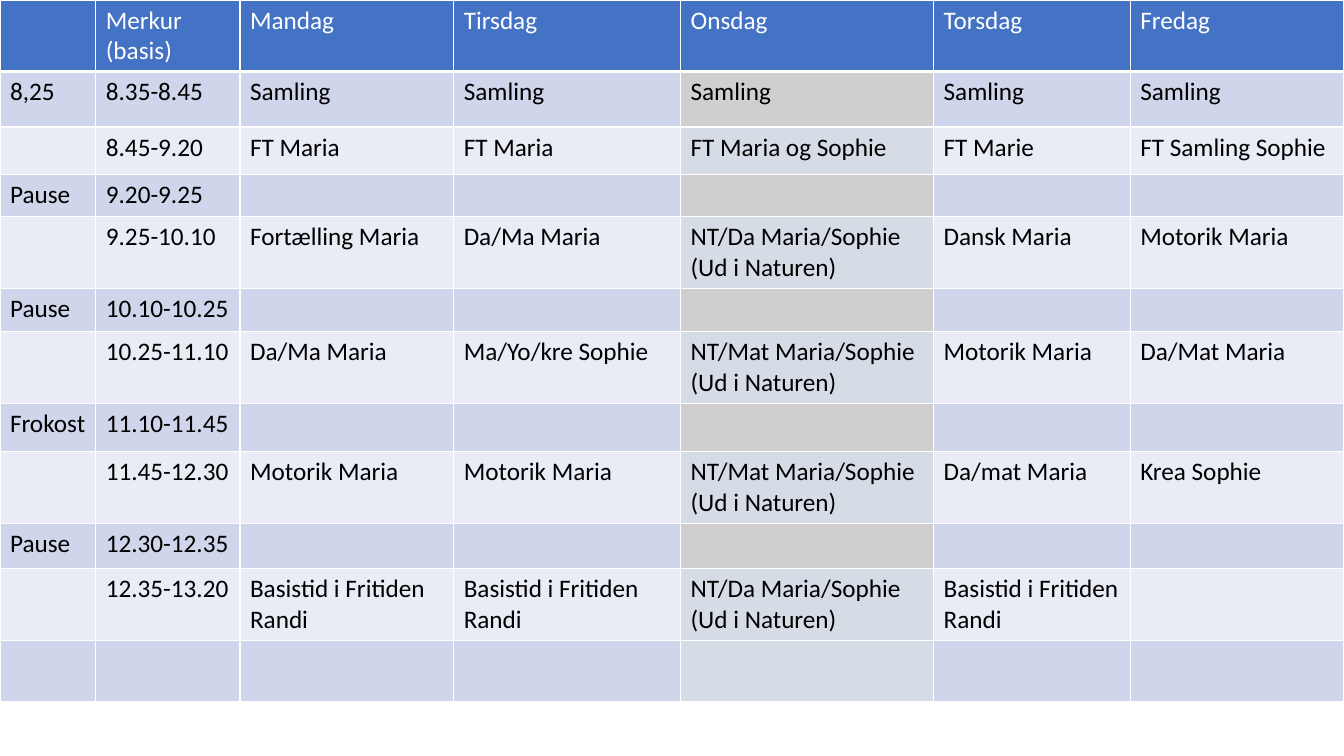
from pptx import Presentation
from pptx.dml.color import RGBColor as RGB
from pptx.oxml.ns import qn
from pptx.util import Inches, Pt
from lxml.etree import SubElement

COLORS = {
    "header": "4472C4", "odd": "CFD5EA", "even": "E9EBF5",
    "wed_odd": "D0CECE", "wed_even": "D6DCE5",
    "white": "FFFFFF", "black": "000000",
}
FONT = {"name": "Calibri", "size": Pt(18), "bold": False}
WEDNESDAY = 4
COL_WIDTHS = [0.95, 1.43, 2.12, 2.25, 2.51, 1.95, 2.12]
ROW_HEIGHTS = [0.48, 0.55, 0.47, 0.42, 0.53, 0.43,
               0.53, 0.48, 0.71, 0.45, 0.4, 0.61]
HEADER_BORDERS = {"a:lnL": 1, "a:lnR": 1, "a:lnT": 1, "a:lnB": 3}

OUTDOORS = "\n(Ud i Naturen)"
AFTERNOON = "Basistid i Fritiden Randi"
# Rows may be shorter than the table; the remaining cells stay empty
TIMETABLE = [
    ["", "Merkur (basis)", "Mandag", "Tirsdag", "Onsdag", "Torsdag", "Fredag"],
    ["8,25", "8.35-8.45"] + ["Samling"] * 5,
    ["", "8.45-9.20", "FT Maria", "FT Maria", "FT Maria og Sophie",
     "FT Marie", "FT Samling Sophie"],
    ["Pause", "9.20-9.25"],
    ["", "9.25-10.10", "Fortælling Maria", "Da/Ma Maria",
     "NT/Da Maria/Sophie" + OUTDOORS, "Dansk Maria", "Motorik Maria"],
    ["Pause", "10.10-10.25"],
    ["", "10.25-11.10", "Da/Ma Maria", "Ma/Yo/kre Sophie",
     "NT/Mat Maria/Sophie" + OUTDOORS, "Motorik Maria", "Da/Mat Maria"],
    ["Frokost", "11.10-11.45"],
    ["", "11.45-12.30", "Motorik Maria", "Motorik Maria",
     "NT/Mat Maria/Sophie" + OUTDOORS, "Da/mat Maria", "Krea Sophie"],
    ["Pause", "12.30-12.35"],
    ["", "12.35-13.20", AFTERNOON, AFTERNOON,
     "NT/Da Maria/Sophie" + OUTDOORS, AFTERNOON],
    [],
]


def fill_name(row, col):
    """Banded rows, with a separate pair of shades for Wednesday."""
    if row == 0:
        return "header"
    if col != WEDNESDAY:
        return "odd" if row % 2 else "even"
    last = len(TIMETABLE) - 1
    return "wed_odd" if row % 2 and row != last else "wed_even"


def add_borders(cell, borders):
    tcPr = cell._tc.get_or_add_tcPr()
    for tag, width in borders.items():
        ln = SubElement(tcPr, qn(tag), w=str(Pt(width)))
        fill = SubElement(ln, qn("a:solidFill"))
        SubElement(fill, qn("a:srgbClr"), val=COLORS["white"])


def format_cell(cell, text, fill, color):
    cell.fill.solid()
    cell.fill.fore_color.rgb = RGB.from_string(COLORS[fill])
    if not text:
        return
    cell.text = text
    for p in cell.text_frame.paragraphs:
        for r in p.runs:
            for key, value in FONT.items():
                setattr(r.font, key, value)
            r.font.color.rgb = RGB.from_string(COLORS[color])


def add_timetable(slide, left, top, width, height):
    frame = slide.shapes.add_table(
        len(ROW_HEIGHTS), len(COL_WIDTHS),
        Inches(left), Inches(top), Inches(width), Inches(height))
    table = frame.table

    # Grid
    for column, w in zip(table.columns, COL_WIDTHS):
        column.width = Inches(w)
    for row, h in zip(table.rows, ROW_HEIGHTS):
        row.height = Inches(h)
    frame.width, frame.height = Inches(width), Inches(height)

    # Cells
    for i, texts in enumerate(TIMETABLE):
        for j in range(len(COL_WIDTHS)):
            cell = table.cell(i, j)
            if i == 0:
                add_borders(cell, HEADER_BORDERS)
            text = texts[j] if j < len(texts) else ""
            format_cell(cell, text, fill_name(i, j),
                        "black" if i else "white")


def main():
    prs = Presentation()
    prs.slide_width, prs.slide_height = Inches(13.33), Inches(7.5)
    slide = prs.slides.add_slide(prs.slide_layouts[6])
    add_timetable(slide, 0, 0, 13.33, 6.92)
    prs.save("out.pptx")


if __name__ == "__main__":
    main()
